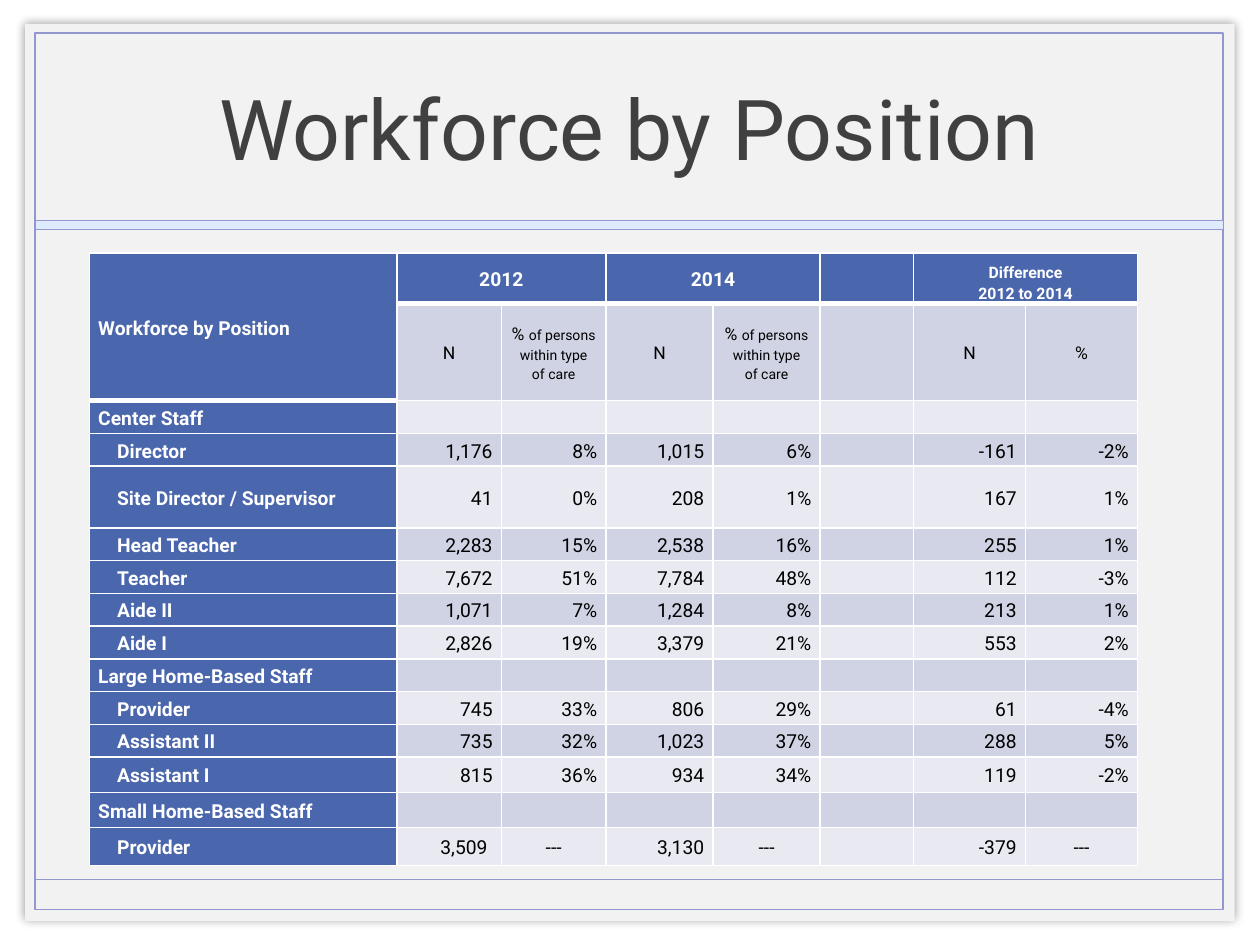
from lxml import etree
from pptx import Presentation
from pptx import util as u
from pptx.dml.color import RGBColor
from pptx.enum import shapes, text
from pptx.oxml.ns import qn

COLORS = {"card": "F2F2F2", "frame": "9297CF", "band": "DEEAFD", "title": "404040",
          "header": "4A66AC", "dark": "D0D3E3", "light": "E9EAF1",
          "white": "FFFFFF", "black": "000000"}
LEFT, CENTER, RIGHT = text.PP_ALIGN.LEFT, text.PP_ALIGN.CENTER, text.PP_ALIGN.RIGHT
MIDDLE, BOTTOM = text.MSO_ANCHOR.MIDDLE, text.MSO_ANCHOR.BOTTOM


def write(para, words, size=11, color="black", bold=False, align=LEFT, spacing=1.15):
    """Add words to a paragraph; each newline becomes a line break."""
    para.alignment = align
    para.line_spacing = spacing
    for number, line in enumerate(words.split("\n")):
        if number:
            para.add_line_break()
            etree.SubElement(para._p[-1], qn("a:rPr"), sz=str(size * 100))
        span = para.add_run()
        span.text = line
        span.font.name = "Roboto"
        span.font.size = u.Pt(size)
        span.font.bold = bold
        span.font.color.rgb = RGBColor.from_string(COLORS[color])


def style_cell(cell, fill, top=1, bottom=1):
    """Give a cell white borders, a fill and tight margins."""
    props = cell._tc.get_or_add_tcPr()
    for side, width in (("L", 1), ("R", 1), ("T", top), ("B", bottom)):
        line = etree.SubElement(props, qn(f"a:ln{side}"), w=str(u.Pt(width)))
        solid = etree.SubElement(line, qn("a:solidFill"))
        etree.SubElement(solid, qn("a:srgbClr"), val=COLORS["white"])
    cell.fill.solid()
    cell.fill.fore_color.rgb = RGBColor.from_string(COLORS[fill])
    cell.margin_left = cell.margin_right = u.Inches(0.07)
    cell.margin_top = cell.margin_bottom = 0
    cell.vertical_anchor = MIDDLE


deck = Presentation()
deck.slide_width, deck.slide_height = u.Inches(10), u.Inches(7.5)
page = deck.slides.add_slide(deck.slide_layouts[6])

# Card, frame and title band: left, top, width, height, fill, line width
panels = [(0.2, 0.19, 9.6, 7.12, "card", 0),
          (0.28, 0.26, 9.43, 6.96, None, 1),
          (0.28, 1.75, 9.43, 0.07, "band", 0.25)]
for left, top, width, height, fill, line_width in panels:
    panel = page.shapes.add_shape(shapes.MSO_SHAPE.RECTANGLE, u.Inches(left), u.Inches(top),
                                  u.Inches(width), u.Inches(height))
    panel.shadow.inherit = False
    if fill:
        panel.fill.solid()
        panel.fill.fore_color.rgb = RGBColor.from_string(COLORS[fill])
    else:
        panel.fill.background()
    if line_width:
        panel.line.width = u.Pt(line_width)
        panel.line.color.rgb = RGBColor.from_string(COLORS["frame"])
    else:
        panel.line.fill.background()
    if fill == "card":
        effects = panel._element.spPr.find(qn("a:effectLst"))
        glow = etree.SubElement(effects, qn("a:outerShdw"), blurRad=str(u.Pt(5)),
                                dist="0", dir="0", algn="ctr", rotWithShape="0")
        shade = etree.SubElement(glow, qn("a:srgbClr"), val=COLORS["black"])
        etree.SubElement(shade, qn("a:alpha"), val="40000")

# Footer rule
rule = page.shapes.add_connector(shapes.MSO_CONNECTOR.STRAIGHT, u.Inches(0.28), u.Inches(6.98),
                                 u.Inches(9.71), u.Inches(6.98))
rule.line.width = u.Pt(1)
rule.line.color.rgb = RGBColor.from_string(COLORS["frame"])
etree.SubElement(rule._element.spPr, qn("a:effectLst"))

# Title
box = page.shapes.add_textbox(u.Inches(0.98), u.Inches(0.27), u.Inches(8.03), u.Inches(1.47))
box.text_frame.word_wrap = True
box.text_frame.vertical_anchor = MIDDLE
write(box.text_frame.paragraphs[0], "Workforce by Position", size=48, color="title",
      align=CENTER, spacing=1.0)

# Body rows: label, then N and % for 2012, 2014 and the difference; groups have no values
body = [("Center Staff",),
        ("Director", "1,176", "8%", "1,015", "6%", "", "-161", "-2%"),
        ("Site Director / Supervisor", "41", "0%", "208", "1%", "", "167", "1%"),
        ("Head Teacher", "2,283", "15%", "2,538", "16%", "", "255", "1%"),
        ("Teacher", "7,672", "51%", "7,784", "48%", "", "112", "-3%"),
        ("Aide II", "1,071", "7%", "1,284", "8%", "", "213", "1%"),
        ("Aide I", "2,826", "19%", "3,379", "21%", "", "553", "2%"),
        ("Large Home-Based Staff",),
        ("Provider", "745", "33%", "806", "29%", "", "61", "-4%"),
        ("Assistant II", "735", "32%", "1,023", "37%", "", "288", "5%"),
        ("Assistant I", "815", "36%", "934", "34%", "", "119", "-2%"),
        ("Small Home-Based Staff",),
        ("Provider", "3,509", "---", "3,130", "---", "", "-379", "---")]
column_widths = [2.44, 0.83, 0.83, 0.85, 0.85, 0.74, 0.89, 0.89]
row_heights = [0.4, 0.77, 0.26, 0.26, 0.49] + [0.26] * 7 + [0.28, 0.28, 0.3]

# Table grid
table = page.shapes.add_table(len(row_heights), len(column_widths), u.Inches(0.71),
                              u.Inches(2.01), u.Inches(8.31), u.Inches(4.89)).table
table.first_row = table.horz_banding = False
for column, width in zip(table.columns, column_widths):
    column.width = u.Inches(width)
for row, height in zip(table.rows, row_heights):
    row.height = u.Inches(height)
for r in range(len(row_heights)):
    for c in range(len(column_widths)):
        is_header = r == 0 or c == 0
        fill = "header" if is_header else "dark" if r % 2 else "light"
        thick_bottom = (r == 0) or (r == 1 and c == 0)
        thick_top = (r == 1 and c > 0) or (r == 2 and c == 0)
        style_cell(table.cell(r, c), fill, 3 if thick_top else 1, 3 if thick_bottom else 1)

# Column headings
table.cell(0, 0).merge(table.cell(1, 0))
for c in (1, 3, 6):
    table.cell(0, c).merge(table.cell(0, c + 1))
corner = table.cell(0, 0).text_frame.paragraphs[0]
write(corner, "Workforce by Position", color="white", bold=True)
corner.space_after = u.Pt(3)
for c, year in ((1, "2012"), (3, "2014")):
    write(table.cell(0, c).text_frame.paragraphs[0], year, color="white", bold=True, align=CENTER)
difference = table.cell(0, 6)
difference.vertical_anchor = BOTTOM
for para, words in ((difference.text_frame.paragraphs[0], "Difference"),
                    (difference.text_frame.add_paragraph(), "2012 to 2014")):
    write(para, words, size=9, color="white", bold=True, align=CENTER)
for c in (1, 3, 6):
    write(table.cell(1, c).text_frame.paragraphs[0], "N", size=10, align=CENTER)
    share = table.cell(1, c + 1)
    share.margin_left = share.margin_right = u.Inches(0.02)
    para = share.text_frame.paragraphs[0]
    write(para, "%" if c == 6 else "% ", size=10, align=CENTER)
    if c != 6:
        write(para, "of persons\nwithin type\nof care", size=8, align=CENTER)

# Labels and values
for r, (label, *values) in enumerate(body, start=2):
    cell = table.cell(r, 0)
    write(cell.text_frame.paragraphs[0], label, color="white", bold=True)
    if values:
        cell.margin_left = u.Inches(0.22)
    for c, value in enumerate(values, start=1):
        if value:
            write(table.cell(r, c).text_frame.paragraphs[0], value,
                  align=CENTER if value == "---" else RIGHT)
table.cell(len(body) + 1, 1).margin_right = u.Inches(0.11)

# Small type in empty cells keeps the rows at their set height
for cell in table.iter_cells():
    if not cell.text:
        etree.SubElement(cell.text_frame.paragraphs[0]._p, qn("a:endParaRPr"), sz="1100")

deck.save("out.pptx")
